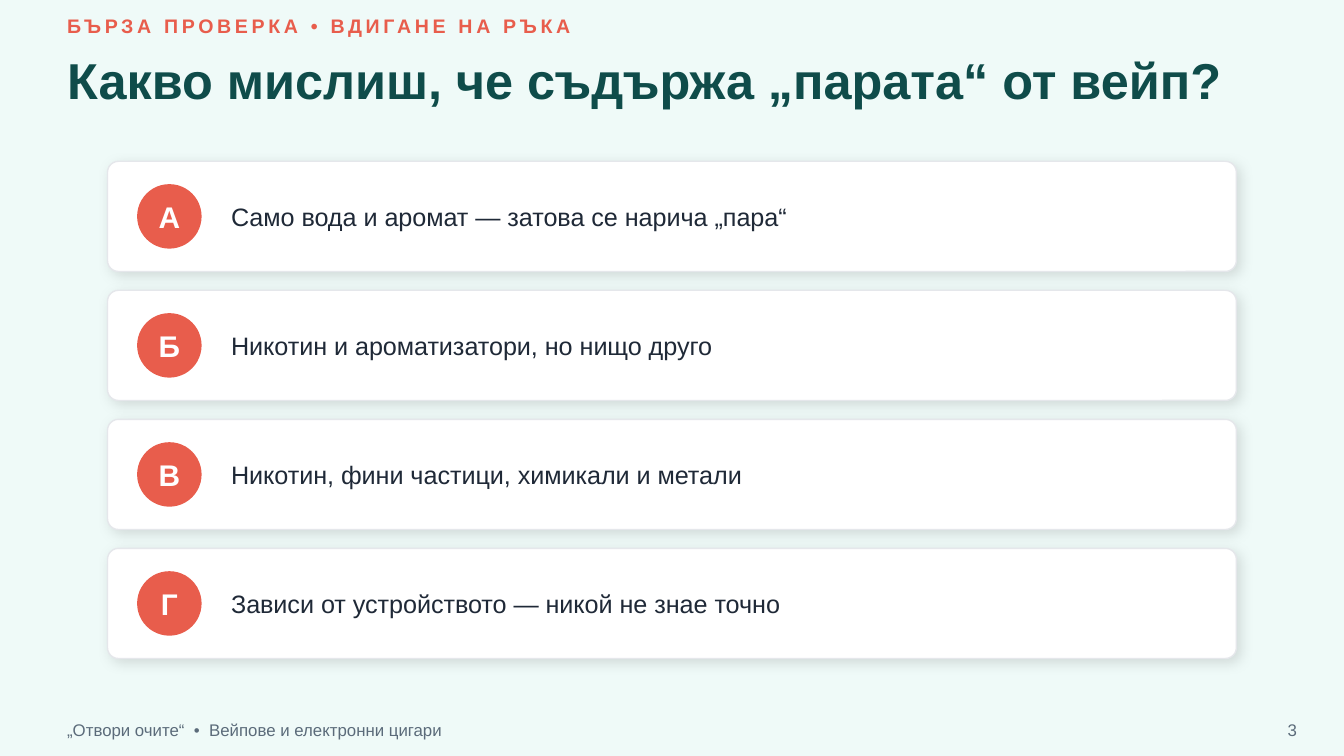
from dataclasses import dataclass

from lxml.etree import SubElement
from pptx import Presentation
from pptx.dml.color import RGBColor
from pptx.enum.shapes import MSO_SHAPE
from pptx.enum.text import MSO_ANCHOR, MSO_AUTO_SIZE, PP_ALIGN
from pptx.oxml import parse_xml
from pptx.oxml.ns import nsdecls, qn
from pptx.util import Pt

EMU_PER_PX = 914400 // 200
FONT = "Arial"
COLORS = {
    "background": "EFFAF8",
    "accent": "E85D4C",
    "title": "0F4C4A",
    "card": "FFFFFF",
    "border": "E5E7EB",
    "body": "1F2937",
    "muted": "5B6B7A",
}
CARD_TOP, CARD_HEIGHT, CARD_GAP = 240, 164, 28
BADGE_SIZE = 96


@dataclass(frozen=True)
class Box:
    left: int
    top: int
    width: int
    height: int

    def emu(self) -> tuple[int, ...]:
        return tuple(v * EMU_PER_PX
                     for v in (self.left, self.top, self.width, self.height))


@dataclass(frozen=True)
class TextStyle:
    size: float
    color: str
    bold: bool = False
    align: PP_ALIGN = PP_ALIGN.LEFT
    spacing: int = 0  # hundredths of a point


@dataclass(frozen=True)
class Answer:
    letter: str
    wording: str


KICKER = TextStyle(10.5, "accent", bold=True, spacing=200)
TITLE = TextStyle(27, "title", bold=True)
BADGE = TextStyle(16, "card", bold=True, align=PP_ALIGN.CENTER)
ANSWER = TextStyle(13.5, "body")
FOOTER = TextStyle(9, "muted")
PAGE = TextStyle(9, "muted", align=PP_ALIGN.RIGHT)

ANSWERS = [
    Answer("А", "Само вода и аромат — затова се нарича „пара“"),
    Answer("Б", "Никотин и ароматизатори, но нищо друго"),
    Answer("В", "Никотин, фини частици, химикали и метали"),
    Answer("Г", "Зависи от устройството — никой не знае точно"),
]


def rgb(name: str) -> RGBColor:
    return RGBColor.from_string(COLORS[name])


def write(shape, text: str, style: TextStyle) -> None:
    frame = shape.text_frame
    frame.word_wrap = True
    frame.auto_size = MSO_AUTO_SIZE.NONE
    frame.vertical_anchor = MSO_ANCHOR.MIDDLE
    frame.margin_left = frame.margin_right = 0
    frame.margin_top = frame.margin_bottom = 0
    paragraph = frame.paragraphs[0]
    run = paragraph.add_run()
    run.text = text
    paragraph.alignment = style.align
    font = paragraph.font
    font.name, font.size, font.bold = FONT, Pt(style.size), style.bold
    font.color.rgb = rgb(style.color)
    if style.spacing:
        run.font._element.set("spc", str(style.spacing))


def add_text(slide, box: Box, text: str, style: TextStyle) -> None:
    write(slide.shapes.add_textbox(*box.emu()), text, style)


def add_filled(slide, kind: MSO_SHAPE, box: Box, fill: str):
    shape = slide.shapes.add_shape(kind, *box.emu())
    shape.shadow.inherit = False
    shape.fill.solid()
    shape.fill.fore_color.rgb = rgb(fill)
    shape.line.fill.background()
    return shape


def add_soft_shadow(shape) -> None:
    effects = shape._element.spPr.find(qn("a:effectLst"))
    shadow = parse_xml(
        f'<a:outerShdw {nsdecls("a")} blurRad="{Pt(7)}" dist="{Pt(2)}" '
        'dir="2700000" algn="bl" rotWithShape="0"/>')
    color = SubElement(shadow, qn("a:srgbClr"), val="000000")
    SubElement(color, qn("a:alpha"), val="13000")
    effects.append(shadow)


def add_answer(slide, answer: Answer, top: int) -> None:
    card = add_filled(slide, MSO_SHAPE.ROUNDED_RECTANGLE,
                      Box(160, top, 1680, CARD_HEIGHT), "card")
    card.adjustments[0] = 0.1
    card.line.color.rgb = rgb("border")
    card.line.width = Pt(0.75)
    add_soft_shadow(card)

    badge_top = top + (CARD_HEIGHT - BADGE_SIZE) // 2
    badge = add_filled(slide, MSO_SHAPE.OVAL,
                       Box(204, badge_top, BADGE_SIZE, BADGE_SIZE), "accent")
    write(badge, answer.letter, BADGE)
    add_text(slide, Box(344, top, 1460, CARD_HEIGHT), answer.wording, ANSWER)


def main() -> None:
    deck = Presentation()
    deck.slide_width = 2000 * EMU_PER_PX
    deck.slide_height = 1125 * EMU_PER_PX
    slide = deck.slides.add_slide(deck.slide_layouts[5])
    slide.background.fill.solid()
    slide.background.fill.fore_color.rgb = rgb("background")

    title = slide.shapes.title
    title.left, title.top, title.width, title.height = Box(100, 56, 1800, 124).emu()
    write(title, "Какво мислиш, че съдържа „парата“ от вейп?", TITLE)
    add_text(slide, Box(100, 12, 1800, 52), "БЪРЗА ПРОВЕРКА • ВДИГАНЕ НА РЪКА", KICKER)

    for row, answer in enumerate(ANSWERS):
        add_answer(slide, answer, CARD_TOP + row * (CARD_HEIGHT + CARD_GAP))

    add_text(slide, Box(100, 1056, 1200, 60),
             "„Отвори очите“  •  Вейпове и електронни цигари", FOOTER)
    add_text(slide, Box(1860, 1056, 70, 60), "3", PAGE)
    deck.save("out.pptx")


if __name__ == "__main__":
    main()
